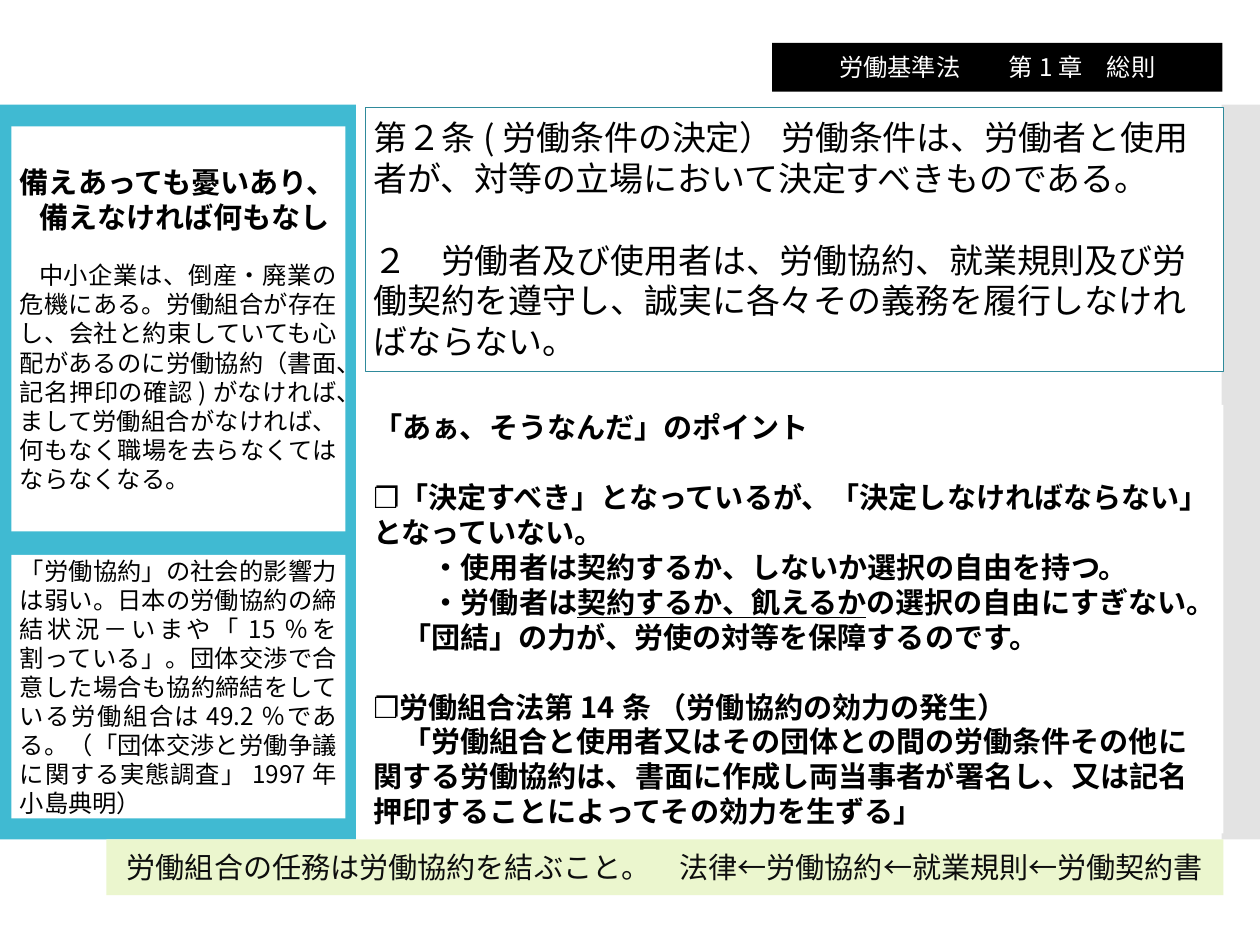
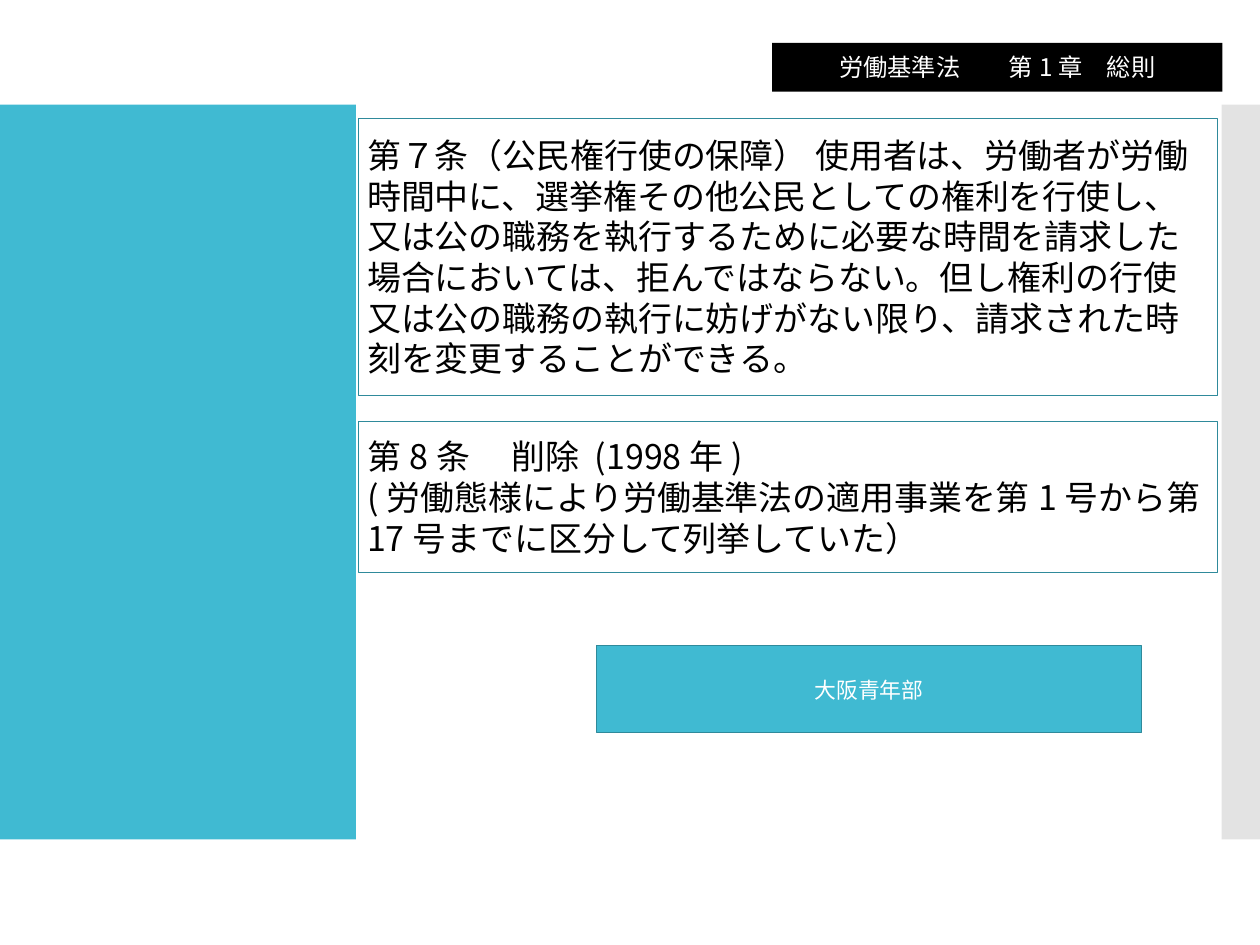
from lxml.etree import SubElement
from pptx import Presentation
from pptx.dml.color import RGBColor
from pptx.enum.shapes import MSO_SHAPE as SHAPE
from pptx.enum.text import MSO_ANCHOR as ANCHOR, PP_ALIGN as ALIGN
from pptx.oxml.ns import qn
from pptx.util import Inches, Pt

COLORS = {"teal": "40BAD2", "edge": "2F8A9B", "gray": "C8C8C8", "white": "FFFFFF",
          "black": "000000", "lime": "EBF6CE", "ink": "0D0D0D"}
JAPANESE, LATIN = "Noto Sans CJK JP", "Cabin"
LEADING = 1.2
TITLE = "労働基準法　　第1章　総則"
TITLE_AT = (8.85, 0.49, 5.16, 0.56)
BAND_TOP, BAND_HEIGHT = 1.2, 8.42
BANDS = [("teal", 0, 4.08, 100), ("gray", 14, 0.44, 50)]

STYLES = {
    "title": {"size": 20, "color": "white", "align": ALIGN.CENTER, "fill": "black"},
    "article": {"size": 28, "fill": "white", "line": 0.25},
    "points": {"size": 24, "bold": True, "fill": "white"},
    "card": {"size": 20, "align": ALIGN.JUSTIFY, "fill": "white"},
    "summary": {"size": 24, "font": LATIN, "color": "ink", "align": ALIGN.CENTER,
                "fill": "lime"},
    "group": {"size": 18, "font": LATIN, "color": "white", "align": ALIGN.CENTER,
              "fill": "teal", "line": 0.85},
}
HEADING = {"size": 24, "bold": True, "align": ALIGN.LEFT}

SLIDES = [
    [
        ("article", (4.18, 1.23, 9.84, 3.02), [
            ("第２条(労働条件の決定） 労働条件は、労働者と使用者が、対等の立場において決定すべきものである。", {}),
            ("２　労働者及び使用者は、労働協約、就業規則及び労働契約を遵守し、誠実に各々その義務を履行しなければならない。",
             {"gap": 28}),
        ]),
        ("points", (4.18, 4.64, 9.84, 4.91), [
            ("「あぁ、そうなんだ」のポイント", {}),
            ("❐「決定すべき」となっているが、「決定しなければならない」となっていない。", {"gap": 24}),
            ("・使用者は契約するか、しないか選択の自由を持つ。", {"indent": 0.67}),
            (("労働者は", "契約するか、飢えるか", "の選択の自由にすぎない。"),
             {"indent": 0.67, "lead": "・", "underline": 1}),
            ("「団結」の力が、労使の対等を保障するのです。", {"indent": 0.33}),
            ("❐労働組合法第14条 （労働協約の効力の発生）", {"gap": 24}),
            ("「労働組合と使用者又はその団体との間の労働条件その他に関する労働協約は、書面に作成し両当事者が署名し、又は記名押印することによってその効力を生ずる」",
             {"indent": 0.33}),
        ]),
        ("card", (0.13, 1.45, 3.83, 4.64), [
            ("備えあっても憂いあり、", HEADING),
            ("備えなければ何もなし", {**HEADING, "indent": 0.22}),
            ("中小企業は、倒産・廃業の危機にある。労働組合が存在し、会社と約束していても心配があるのに労働協約（書面、記名押印の確認)がなければ、まして労働組合がなければ、何もなく職場を去らなくてはならなくなる。",
             {"gap": 18, "indent": 0.22}),
        ]),
        ("card", (0.13, 6.36, 3.83, 3.02), [
            ("「労働協約」の社会的影響力は弱い。日本の労働協約の締結状況－いまや「15％を割っている」。団体交渉で合意した場合も協約締結をしている労働組合は49.2％である。（「団体交渉と労働争議に関する実態調査」1997年小島典明）",
             {}),
        ]),
        ("summary", (1.22, 9.62, 12.8, 0.64), [
            ("労働組合の任務は労働協約を結ぶこと。　法律←労働協約←就業規則←労働契約書", {}),
        ]),
    ],
    [
        ("article", (4.11, 1.35, 9.84, 3.18), [
            ("第７条（公民権行使の保障） 使用者は、労働者が労働時間中に、選挙権その他公民としての権利を行使し、又は公の職務を執行するために必要な時間を請求した場合においては、拒んではならない。但し権利の行使又は公の職務の執行に妨げがない限り、請求された時刻を変更することができる。",
             {}),
        ]),
        ("article", (4.11, 4.83, 9.84, 1.73), [
            ("第8条 　削除 (1998年)", {}),
            ("(労働態様により労働基準法の適用事業を第1号から第17号までに区分して列挙していた）", {}),
        ]),
        ("group", (6.84, 7.4, 6.24, 1), [("大阪青年部", {})]),
    ],
]


def rgb(name):
    return RGBColor.from_string(COLORS[name])


def paint(box, fill, line=None):
    box.fill.solid()
    box.fill.fore_color.rgb = rgb(fill)
    if line:
        box.line.color.rgb = rgb("edge")
        box.line.width = Pt(line)
    else:
        box.line.fill.background()


def add_box(page, at):
    box = page.shapes.add_shape(SHAPE.RECTANGLE, *map(Inches, at))
    box.shadow.inherit = False
    return box


def add_span(para, text, look, underline):
    span = para.add_run()
    span.text = text
    formats = {"size": Pt(look["size"]), "bold": look.get("bold", False),
               "name": look.get("font", JAPANESE), "underline": underline}
    for key, value in formats.items():
        setattr(span.font, key, value)
    span.font.color.rgb = rgb(look.get("color", "black"))
    east_asian = SubElement(span.font._element, qn("a:ea"))
    east_asian.set("typeface", JAPANESE)
    span.font._element.find(qn("a:latin")).addnext(east_asian)


def write(box, style, paragraphs):
    frame = box.text_frame
    frame.word_wrap = True
    frame.vertical_anchor = ANCHOR.MIDDLE
    for index, (content, changes) in enumerate(paragraphs):
        look = {**style, **changes}
        para = frame.add_paragraph() if index else frame.paragraphs[0]
        formats = {"alignment": look.get("align", ALIGN.LEFT),
                   "line_spacing": Pt(look["size"] * LEADING),
                   "space_before": Pt(look.get("gap", 0) * LEADING),
                   "space_after": Pt(0)}
        for key, value in formats.items():
            setattr(para, key, value)
        para._p.get_or_add_pPr().set("indent", str(Inches(look.get("indent", 0))))
        spans = (content,) if isinstance(content, str) else content
        for order, text in enumerate(spans):
            lead = look.get("lead", "") if order == 0 else ""
            add_span(para, lead + text, look, order == look.get("underline"))


def add_bands(page):
    tree = page.slide_layout.shapes.element
    for order, (color, left, width, opacity) in enumerate(BANDS):
        band = add_box(page, (left, BAND_TOP, width, BAND_HEIGHT))
        paint(band, color)
        if opacity < 100:
            tint = band.element.find(".//" + qn("a:srgbClr"))
            SubElement(tint, qn("a:alpha")).set("val", str(opacity * 1000))
        band.element.find(".//" + qn("p:cNvPr")).set("id", str(100 + order))
        tree.insert(2 + order, band.element)


def set_title(page):
    title = page.shapes.title
    for side, value in zip(("left", "top", "width", "height"), TITLE_AT):
        setattr(title, side, Inches(value))
    style = STYLES["title"]
    paint(title, style["fill"])
    write(title, style, [(TITLE, {})])


def main():
    deck = Presentation()
    deck.slide_width, deck.slide_height = Inches(14.44), Inches(10.83)
    layout = deck.slide_layouts[5]
    for number, boxes in enumerate(SLIDES):
        page = deck.slides.add_slide(layout)
        if number == 0:
            add_bands(page)
        set_title(page)
        for kind, at, paragraphs in boxes:
            style = STYLES[kind]
            box = add_box(page, at)
            paint(box, style["fill"], style.get("line"))
            write(box, style, paragraphs)
    deck.save("out.pptx")


if __name__ == "__main__":
    main()
